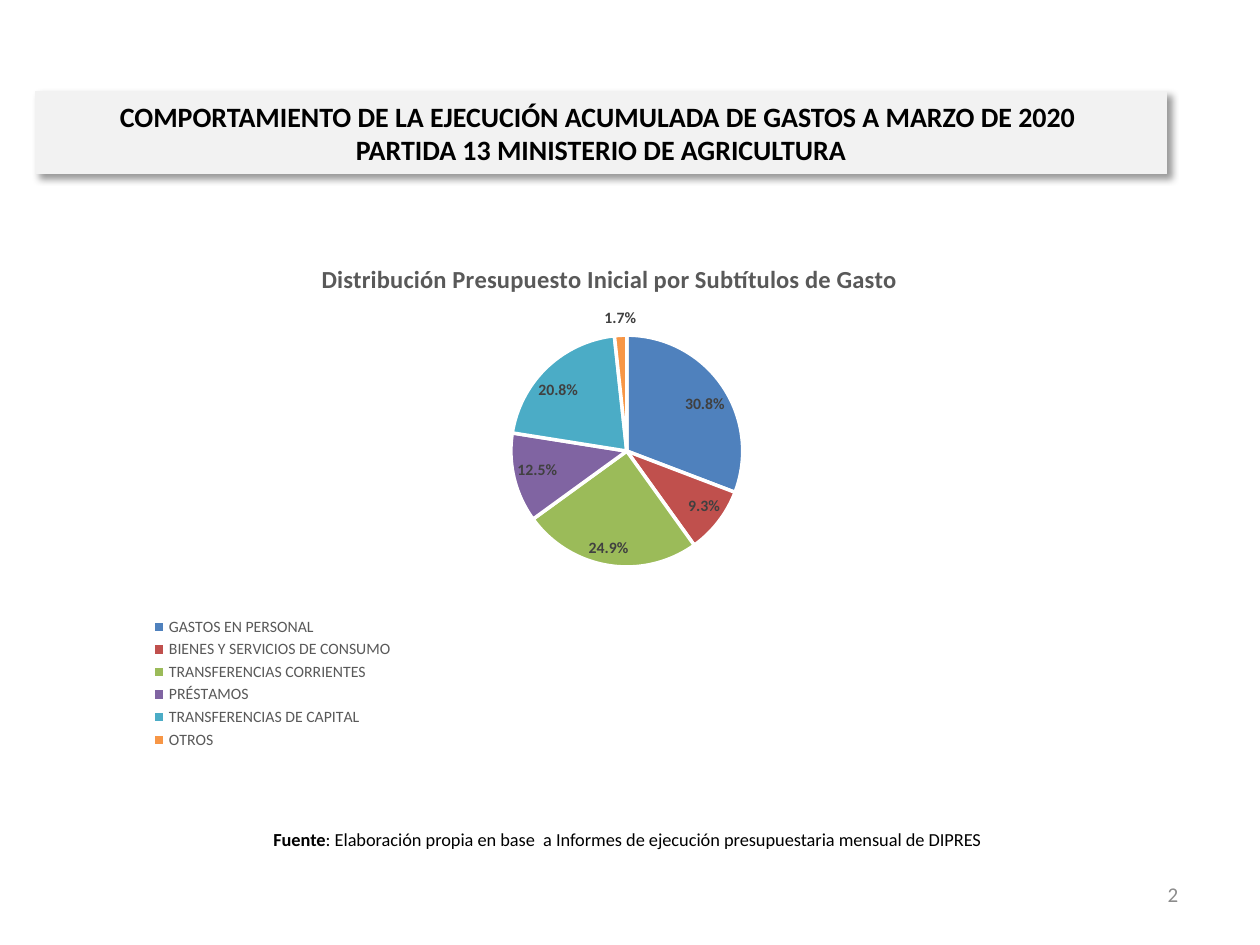
from lxml.etree import SubElement
from pptx import Presentation
from pptx.chart.data import CategoryChartData
from pptx.dml.color import RGBColor
from pptx.enum.chart import XL_CHART_TYPE as ChartType
from pptx.enum.chart import XL_LABEL_POSITION as LabelPosition
from pptx.enum.chart import XL_LEGEND_POSITION as LegendPosition
from pptx.enum.shapes import MSO_SHAPE as Shape
from pptx.enum.text import MSO_ANCHOR as Anchor
from pptx.enum.text import PP_ALIGN as Align
from pptx.oxml import parse_xml
from pptx.oxml.ns import nsdecls, qn
from pptx.util import Inches, Pt

BLACK = RGBColor(0x00, 0x00, 0x00)
WHITE = RGBColor(0xFF, 0xFF, 0xFF)
BANNER_GRAY = RGBColor(0xF2, 0xF2, 0xF2)
NUMBER_GRAY = RGBColor(0x8C, 0x8C, 0x8C)
CAPTION_GRAY = RGBColor(0x59, 0x59, 0x59)
LABEL_GRAY = RGBColor(0x40, 0x40, 0x40)
FONT = "Calibri"

BUDGET = [
    ("GASTOS EN PERSONAL", 30.8, RGBColor(0x4F, 0x81, 0xBD)),
    ("BIENES Y SERVICIOS DE CONSUMO", 9.3, RGBColor(0xC0, 0x50, 0x4D)),
    ("TRANSFERENCIAS CORRIENTES", 24.9, RGBColor(0x9B, 0xBB, 0x59)),
    ("PRÉSTAMOS", 12.5, RGBColor(0x80, 0x64, 0xA2)),
    ("TRANSFERENCIAS DE CAPITAL", 20.8, RGBColor(0x4B, 0xAC, 0xC6)),
    ("OTROS", 1.7, RGBColor(0xF7, 0x96, 0x46)),
]


def style_font(font, size, color, bold=False):
    """Apply the slide's typeface with a size, colour and weight."""
    font.name = FONT
    font.size = Pt(size)
    font.bold = bold
    font.color.rgb = color


def write_line(shape, runs, size, color, alignment):
    """Fill a shape with one paragraph made of (text, bold) runs."""
    frame = shape.text_frame
    frame.word_wrap = True
    frame.vertical_anchor = Anchor.MIDDLE
    paragraph = frame.paragraphs[0]
    paragraph.alignment = alignment
    for text, bold in runs:
        run = paragraph.add_run()
        run.text = text
        style_font(run.font, size, color, bold)


def add_text(slide, box, runs, size, color, alignment):
    """Add a text box at (left, top, width, height) in inches."""
    shape = slide.shapes.add_textbox(*map(Inches, box))
    write_line(shape, runs, size, color, alignment)


def add_banner(slide, box, text):
    """Add the shaded heading rectangle with its drop shadow."""
    shape = slide.shapes.add_shape(Shape.RECTANGLE, *map(Inches, box))
    shape.fill.solid()
    shape.fill.fore_color.rgb = BANNER_GRAY
    shape.line.color.rgb = BANNER_GRAY
    shape.line.width = Pt(0.75)
    shape.text_frame.text = text
    shape.text_frame.vertical_anchor = Anchor.MIDDLE
    shape.text_frame.word_wrap = True
    paragraph = shape.text_frame.paragraphs[0]
    paragraph.alignment = Align.CENTER
    for run in paragraph.runs:
        style_font(run.font, 16, BLACK, True)
    shape.shadow.inherit = False
    effects = shape.element.spPr.find(qn("a:effectLst"))
    effects.append(parse_xml(
        f'<a:outerShdw {nsdecls("a")} blurRad="{Pt(4)}" dist="{Pt(3)}" '
        'dir="2700000" algn="tl" rotWithShape="0"><a:srgbClr val="000000">'
        '<a:alpha val="40000"/></a:srgbClr></a:outerShdw>'))


def place(element, predecessor, target=None, **fractions):
    """Insert a manual layout, in fractions of the chart, after a child."""
    for old in element.findall(qn("c:layout")):
        element.remove(old)
    layout = parse_xml(f'<c:layout {nsdecls("c")}><c:manualLayout/></c:layout>')
    manual = layout[0]
    if target:
        SubElement(manual, qn("c:layoutTarget")).set("val", target)
    for axis in ("x", "y"):
        SubElement(manual, qn(f"c:{axis}Mode")).set("val", "edge")
    for key, value in fractions.items():
        SubElement(manual, qn(f"c:{key}")).set("val", str(value))
    if predecessor is None:
        element.insert(0, layout)
    else:
        element.find(qn(predecessor)).addnext(layout)


def add_budget_pie(slide, box):
    """Add the pie of the initial budget by expense subtitle."""
    data = CategoryChartData()
    data.categories = [name for name, _, _ in BUDGET]
    data.add_series("Presupuesto Inicial", [value for _, value, _ in BUDGET])
    chart = slide.shapes.add_chart(
        ChartType.PIE, *map(Inches, box), data).chart
    style_font(chart.font, 10, BLACK)

    chart.has_title = True
    title = chart.chart_title
    title.text_frame.text = "Distribución Presupuesto Inicial por Subtítulos de Gasto"
    style_font(title.text_frame.paragraphs[0].runs[0].font, 14, CAPTION_GRAY, True)
    title.include_in_layout = False
    place(title._element, "c:tx", x=0.24, y=0.05)

    chart.has_legend = True
    legend = chart.legend
    legend.position = LegendPosition.LEFT
    legend.include_in_layout = False
    style_font(legend.font, 9, CAPTION_GRAY)
    place(legend._element, "c:legendPos", x=0.05, y=0.71, w=0.3, h=0.26)

    plot = chart.plots[0]
    plot.vary_by_categories = True
    place(plot._element.getparent(), None, "inner", x=0.035, y=0.194, w=0.965, h=0.43)
    for index, (_, _, color) in enumerate(BUDGET):
        slice_format = plot.series[0].points[index].format
        slice_format.fill.solid()
        slice_format.fill.fore_color.rgb = color
        slice_format.line.color.rgb = WHITE
        slice_format.line.width = Pt(2)

    labels = plot.series[0].data_labels
    labels.show_percentage = True
    labels.show_value = False
    labels.number_format = "0.0%"
    labels.number_format_is_linked = False
    labels.position = LabelPosition.BEST_FIT
    style_font(labels.font, 9, LABEL_GRAY, True)


def main():
    """Build the slide and save it."""
    presentation = Presentation()
    presentation.slide_width = Inches(10)
    presentation.slide_height = Inches(7.5)
    slide = presentation.slides.add_slide(presentation.slide_layouts[6])
    add_text(slide, (7.12, 6.9, 2.33, 0.4), [("2", False)],
             12, NUMBER_GRAY, Align.RIGHT)
    add_banner(slide, (0.28, 0.73, 8.98, 0.65),
               "COMPORTAMIENTO DE LA EJECUCIÓN ACUMULADA DE GASTOS A MARZO DE 2020 \v"
               "PARTIDA 13 MINISTERIO DE AGRICULTURA")
    source = ": Elaboración propia en base  a Informes de ejecución presupuestaria mensual de DIPRES"
    add_text(slide, (0.74, 6.46, 8.48, 0.4), [("Fuente", True), (source, False)],
             10.5, BLACK, Align.CENTER)
    add_budget_pie(slide, (0.39, 1.83, 8.86, 4.28))
    presentation.save("out.pptx")


if __name__ == "__main__":
    main()
